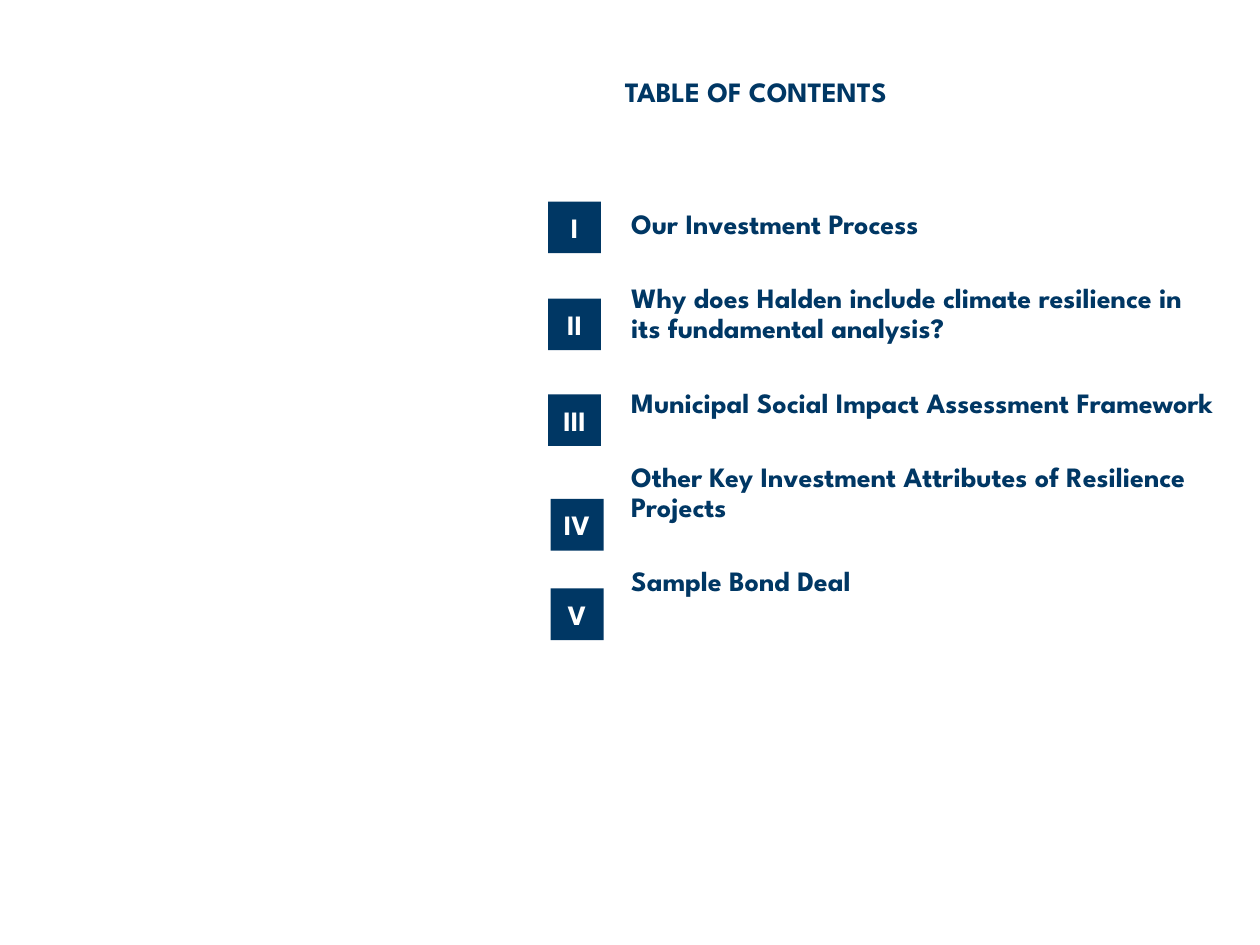
from pptx import Presentation
from pptx.dml.color import RGBColor
from pptx.enum.shapes import MSO_SHAPE
from pptx.enum.text import MSO_ANCHOR, PP_ALIGN
from pptx.util import Inches, Pt

NAVY, WHITE = "003764", "FFFFFF"
FONT = "League Spartan"

# Numeral, left and top of its badge, and topic
SECTIONS = [
    ("I", 4.35, 1.6, "Our Investment Process"),
    ("II", 4.35, 2.37, "Why does Halden include climate resilience in its fundamental analysis?"),
    ("III", 4.35, 3.13, "Municipal Social Impact Assessment Framework"),
    ("IV", 4.37, 3.96, "Other Key Investment Attributes of Resilience Projects"),
    ("V", 4.37, 4.67, "Sample Bond Deal"),
]


def rgb(color):
    return RGBColor.from_string(color)


def set_frame(tf, insets, anchor=MSO_ANCHOR.TOP):
    tf.word_wrap = True
    tf.vertical_anchor = anchor
    tf.margin_left, tf.margin_top, tf.margin_right, tf.margin_bottom = map(Inches, insets)


def write(p, text, color=NAVY, size=16, bold=True, align=PP_ALIGN.LEFT,
          line_spacing=None, space_before=None):
    p.alignment = align
    p.line_spacing = line_spacing
    if space_before is not None:
        p.space_before = Pt(space_before)
    r = p.add_run()
    r.text = text
    r.font.name, r.font.size, r.font.bold = FONT, Pt(size), bold
    r.font.color.rgb = rgb(color)


def add_text(s, left, top, width, height, lines, insets, gap=0, **fmt):
    box = s.shapes.add_textbox(Inches(left), Inches(top), Inches(width), Inches(height))
    tf = box.text_frame
    set_frame(tf, insets)
    for i, line in enumerate(lines):
        p = tf.add_paragraph() if i else tf.paragraphs[0]
        write(p, line, space_before=gap if i else 0, **fmt)


def add_badge(s, numeral, left, top):
    sp = s.shapes.add_shape(MSO_SHAPE.RECTANGLE, Inches(left), Inches(top),
                            Inches(0.42), Inches(0.41))
    sp.shadow.inherit = False
    sp.fill.solid()
    sp.fill.fore_color.rgb = rgb(NAVY)
    sp.line.fill.background()
    set_frame(sp.text_frame, (0.09, 0.04, 0.09, 0.04), MSO_ANCHOR.MIDDLE)
    write(sp.text_frame.paragraphs[0], numeral, color=WHITE, align=PP_ALIGN.CENTER)


def main():
    prs = Presentation()
    prs.slide_width, prs.slide_height = Inches(10), Inches(7.5)
    s = prs.slides.add_slide(prs.slide_layouts[6])

    # Title
    add_text(s, 4.87, 0.55, 4.04, 0.36, ["TABLE OF CONTENTS"], (0.09, 0.04, 0.04, 0.04))

    # Topics
    topics = [topic for *_, topic in SECTIONS]
    add_text(s, 4.78, 1.44, 5.11, 3.81, topics, (0.23,) * 4, gap=25.1, line_spacing=0.9)

    # Numbered badges
    for numeral, left, top, _ in SECTIONS:
        add_badge(s, numeral, left, top)

    prs.save("out.pptx")


if __name__ == "__main__":
    main()
